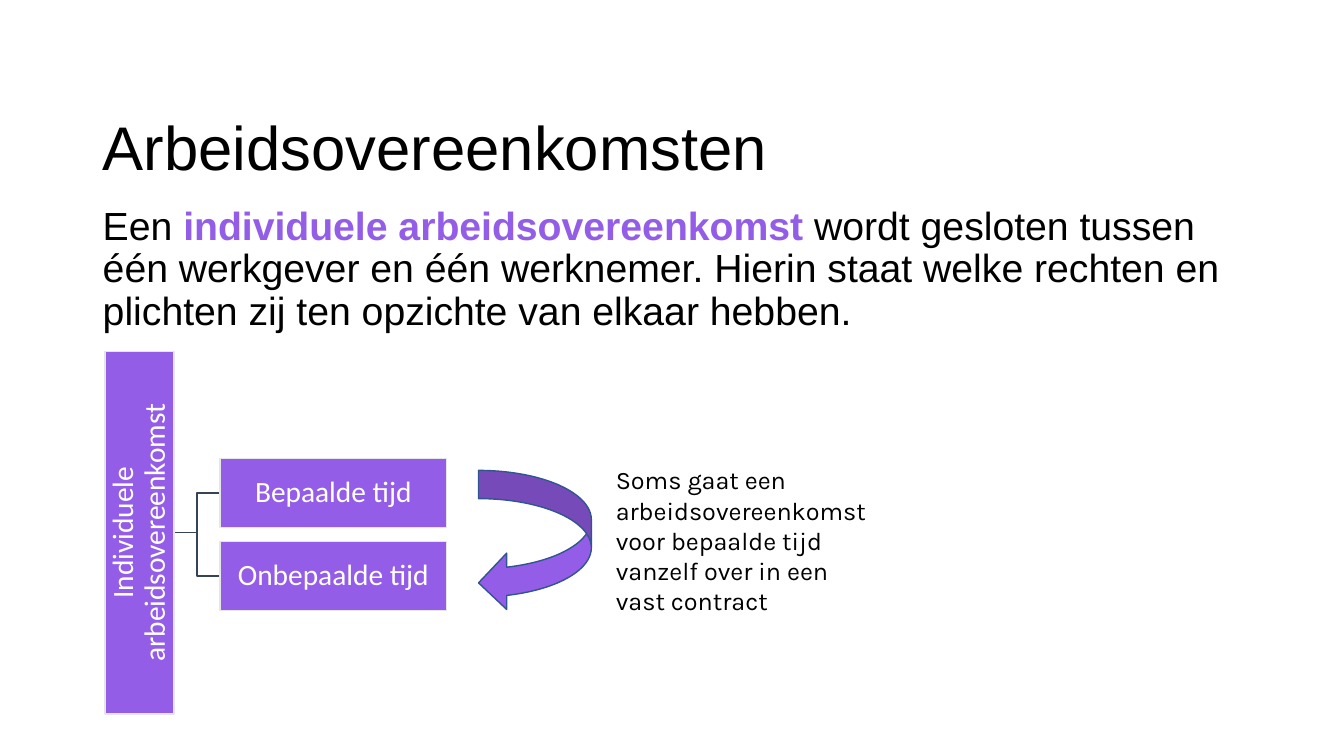
from lxml import etree
from pptx import Presentation, util as u
from pptx.dml.color import RGBColor
from pptx.enum import shapes, text
from pptx.oxml import ns

PURPLE = RGBColor(0x94, 0x5D, 0xE8)
BLACK = RGBColor(0, 0, 0)
WHITE = RGBColor(255, 255, 255)
PALE_GREY = RGBColor(0xE7, 0xE6, 0xE6)
DARK_BLUE = RGBColor(0x36, 0x43, 0x55)
ARROW_BLUE = RGBColor(0x32, 0x54, 0x91)


def style_run(run, size, name, color, bold=False):
    run.font.size = u.Pt(size)
    run.font.name = name
    run.font.color.rgb = color
    run.font.bold = bold


def add_filled(kind, left, top, width, height, line_color):
    shape = slide.shapes.add_shape(kind, u.Pt(left), u.Pt(top), u.Pt(width), u.Pt(height))
    shape.shadow.inherit = False
    shape.fill.solid()
    shape.fill.fore_color.rgb = PURPLE
    shape.line.color.rgb = line_color
    shape.line.width = u.Pt(1)
    return shape


presentation = Presentation()
presentation.slide_width, presentation.slide_height = u.Pt(960), u.Pt(540)
slide = presentation.slides.add_slide(presentation.slide_layouts[1])
title, body = slide.placeholders

# Title and definition
for placeholder, top, height in ((title, 80, 104.4), (body, 144, 342.7)):
    placeholder.left, placeholder.top = u.Pt(66.2), u.Pt(top)
    placeholder.width, placeholder.height = u.Pt(828), u.Pt(height)
    frame = placeholder.text_frame
    frame.word_wrap = True
    frame.auto_size = text.MSO_AUTO_SIZE.NONE
    frame.vertical_anchor = text.MSO_ANCHOR.TOP
    paragraph = frame.paragraphs[0]
    paragraph.alignment = text.PP_ALIGN.LEFT
    paragraph.line_spacing = 0.9
    paragraph.space_before = u.Pt(0)

title_run = title.text_frame.paragraphs[0].add_run()
title_run.text = "Arbeidsovereenkomsten"
style_run(title_run, 44, "Arial", BLACK)

definition = body.text_frame.paragraphs[0]
properties = definition._p.get_or_add_pPr()
properties.set("marL", "0")
properties.set("indent", "0")
etree.SubElement(properties, ns.qn("a:buNone"))
for words, color, bold in (
    ("Een ", BLACK, False),
    ("individuele arbeidsovereenkomst ", PURPLE, True),
    ("wordt gesloten tussen één werkgever en één werknemer. Hierin staat welke "
     "rechten en plichten zij ten opzichte van elkaar hebben.", BLACK, False),
):
    run = definition.add_run()
    run.text = words
    style_run(run, 28, "Arial", color, bold)

# Branches from the contract to its two kinds
BOX_LEFT, BOX_WIDTH, BOX_HEIGHT = 157.2, 161.8, 49.3
BOX_TOPS = (327.6, 386.9)
ROOT_X, ROOT_Y, ROOT_LENGTH = 99.6, 380.5, 259.2
for top in BOX_TOPS:
    branch = slide.shapes.add_connector(
        shapes.MSO_CONNECTOR.ELBOW, u.Pt(ROOT_X + BOX_HEIGHT / 2), u.Pt(ROOT_Y),
        u.Pt(BOX_LEFT), u.Pt(top + BOX_HEIGHT / 2))
    branch.line.color.rgb = DARK_BLUE
    branch.line.width = u.Pt(1)
    etree.SubElement(branch._element.spPr, ns.qn("a:effectLst"))

# Contract boxes, the first turned upright
for label, left, top, width, rotation in (
    ("Individuele arbeidsovereenkomst", ROOT_X - ROOT_LENGTH / 2,
     ROOT_Y - BOX_HEIGHT / 2, ROOT_LENGTH, 270),
    ("Bepaalde tijd", BOX_LEFT, BOX_TOPS[0], BOX_WIDTH, 0),
    ("Onbepaalde tijd", BOX_LEFT, BOX_TOPS[1], BOX_WIDTH, 0),
):
    box = add_filled(shapes.MSO_SHAPE.RECTANGLE, left, top, width, BOX_HEIGHT, PALE_GREY)
    box.rotation = rotation
    frame = box.text_frame
    frame.word_wrap = True
    frame.vertical_anchor = text.MSO_ANCHOR.MIDDLE
    frame.margin_left = frame.margin_right = u.Pt(1)
    frame.margin_top = frame.margin_bottom = u.Pt(1)
    frame.text = label
    paragraph = frame.paragraphs[0]
    paragraph.alignment = text.PP_ALIGN.CENTER
    paragraph.line_spacing = 0.9
    style_run(paragraph.runs[0], 21, "Calibri", WHITE)

# Arrow from fixed to permanent, with its explanation
add_filled(shapes.MSO_SHAPE.CURVED_LEFT_ARROW, 341.8, 336, 80.6, 100.5, ARROW_BLUE)
note = slide.shapes.add_textbox(u.Pt(432.8), u.Pt(328.3), u.Pt(203.8), u.Pt(116.6))
note.text_frame.word_wrap = True
note.text_frame.auto_size = text.MSO_AUTO_SIZE.SHAPE_TO_FIT_TEXT
note.text_frame.text = ("Soms gaat een arbeidsovereenkomst voor bepaalde tijd "
                        "vanzelf over in een vast contract")
style_run(note.text_frame.paragraphs[0].runs[0], 18, "Karla", BLACK)

presentation.save("out.pptx")
